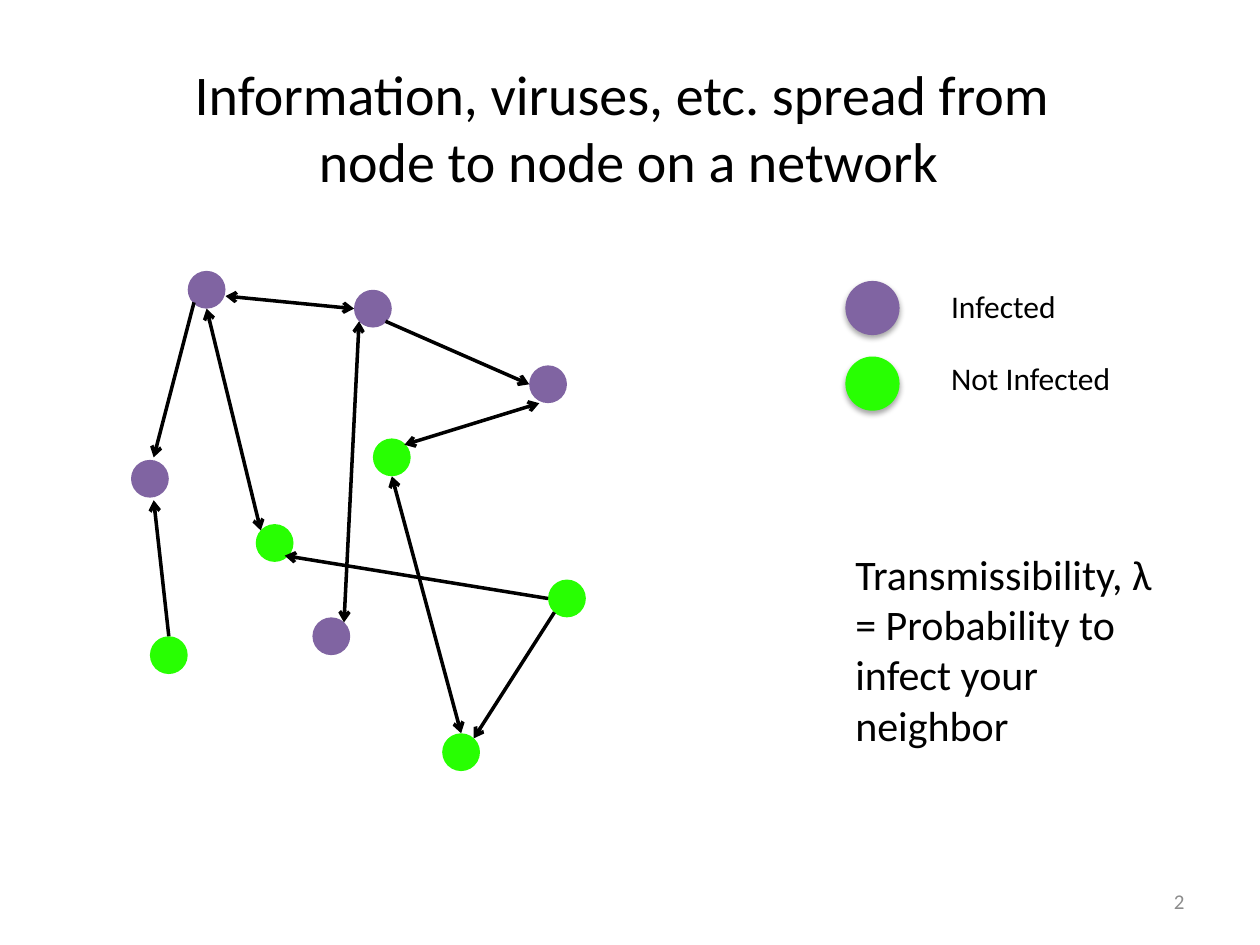
from lxml import etree
from pptx import Presentation
from pptx import util as u
from pptx.dml.color import RGBColor
from pptx.enum import shapes, text
from pptx.oxml import ns

BLACK = RGBColor(0x00, 0x00, 0x00)
WHITE = RGBColor(0xFF, 0xFF, 0xFF)
GRAY = RGBColor(0x8C, 0x8C, 0x8C)
PURPLE = RGBColor(0x80, 0x64, 0xA2)
GREEN = RGBColor(0x28, 0xFF, 0x02)

FONT = "Calibri"
NODE_SIZE = 0.3
LEGEND_SIZE = 0.43

INFECTED = [(0.45, 0), (1.77, 0.15), (3.16, 0.75), (0, 1.5), (1.44, 2.75)]
NOT_INFECTED = [(1.92, 1.33), (0.99, 2.01), (3.31, 2.45), (0.15, 2.9), (2.47, 3.67)]
ONE_WAY = [
    ((2.02, 0.4), (3.16, 0.9)),
    ((3.31, 2.6), (1.22, 2.26)),
    ((0.3, 2.9), (0.18, 1.82)),
    ((3.36, 2.71), (2.72, 3.71)),
    ((0.5, 0.25), (0.18, 1.48)),
]
TWO_WAY = [
    ((3.24, 1.05), (2.17, 1.38)),
    ((0.6, 0.3), (1.03, 2.06)),
    ((1.77, 0.3), (0.75, 0.2)),
    ((1.81, 0.4), (1.69, 2.79)),
    ((2.62, 3.67), (2.07, 1.63)),
]


def write_text(shape, lines, size, **formats):
    """Write one paragraph per line in the slide's font."""
    frame = shape.text_frame
    frame.word_wrap = True
    frame.vertical_anchor = formats.get("anchor", text.MSO_ANCHOR.TOP)
    frame.text = "\n".join(lines)
    font_formats = {"name": FONT, "size": u.Pt(size)}
    for paragraph in frame.paragraphs:
        paragraph.alignment = formats.get("alignment", text.PP_ALIGN.LEFT)
        for name, value in font_formats.items():
            setattr(paragraph.font, name, value)
        paragraph.font.color.rgb = formats.get("color", BLACK)


def add_text(slide, box, lines, size, **formats):
    """Add a wrapped text box."""
    shape = slide.shapes.add_textbox(*map(u.Inches, box))
    write_text(shape, lines, size, **formats)
    return shape


def add_circle(slide, left, top, size, color, shadow=False):
    """Add a filled circle without an outline."""
    circle = slide.shapes.add_shape(
        shapes.MSO_SHAPE.OVAL, *map(u.Inches, (left, top, size, size)))
    circle.fill.solid()
    circle.fill.fore_color.rgb = color
    circle.line.fill.background()
    if not shadow:
        circle.shadow.inherit = False


def add_arrow(slide, start, end, arrowheads):
    """Add a straight line with the named arrowheads."""
    arrow = slide.shapes.add_connector(
        shapes.MSO_CONNECTOR.STRAIGHT, *map(u.Inches, start + end))
    arrow.line.color.rgb = BLACK
    arrow.line.width = u.Pt(2)
    line = arrow.line._get_or_add_ln()
    for arrowhead in arrowheads:
        etree.SubElement(line, ns.qn(f"a:{arrowhead}"), type="arrow")
    etree.SubElement(arrow._element.spPr, ns.qn("a:effectLst"))


def add_title(slide, box):
    """Place and fill the title placeholder."""
    title = slide.shapes.title
    for name, value in zip(("left", "top", "width", "height"), box):
        setattr(title, name, u.Inches(value))
    lines = ["Information, viruses, etc. spread from ", "node to node on a network"]
    write_text(title, lines, 32, alignment=text.PP_ALIGN.CENTER)
    for paragraph in title.text_frame.paragraphs:
        paragraph.space_before = u.Pt(0)


def add_network(slide, left, top):
    """Draw the nodes and the arrows between them."""
    for color, nodes in ((GREEN, NOT_INFECTED), (PURPLE, INFECTED)):
        for x, y in nodes:
            add_circle(slide, left + x, top + y, NODE_SIZE, color)
    for arrowheads, edges in ((["tailEnd"], ONE_WAY), (["headEnd", "tailEnd"], TWO_WAY)):
        for edge in edges:
            start, end = [(left + x, top + y) for x, y in edge]
            add_arrow(slide, start, end, arrowheads)


def add_legend(slide, left, top):
    """Draw the colour key with its labels."""
    entries = [("Infected", PURPLE, 0), ("Not Infected", GREEN, 0.57)]
    for row, (label, color, label_top) in enumerate(entries):
        add_circle(slide, left, top + row * 0.6, LEGEND_SIZE, color, shadow=True)
        add_text(slide, (left + 0.74, top + label_top, 2.02, 0.4), [label], 18)


def add_definition(slide, box):
    """Add the definition of transmissibility on white."""
    lines = ["Transmissibility, λ", "= Probability to infect your neighbor"]
    shape = add_text(slide, box, lines, 24)
    shape.fill.solid()
    shape.fill.fore_color.rgb = WHITE


def main():
    """Build and save the slide."""
    presentation = Presentation()
    presentation.slide_width = u.Inches(10)
    presentation.slide_height = u.Inches(7.5)
    slide = presentation.slides.add_slide(presentation.slide_layouts[5])
    add_title(slide, (0.5, 0.42, 8.98, 1.18))
    add_network(slide, 1.04, 2.15)
    add_legend(slide, 6.71, 2.23)
    add_definition(slide, (6.69, 4.3, 2.83, 1.72))
    add_text(slide, (7.17, 6.95, 2.33, 0.4), ["2"], 12, color=GRAY,
             alignment=text.PP_ALIGN.RIGHT, anchor=text.MSO_ANCHOR.MIDDLE)
    presentation.save("out.pptx")


if __name__ == "__main__":
    main()
